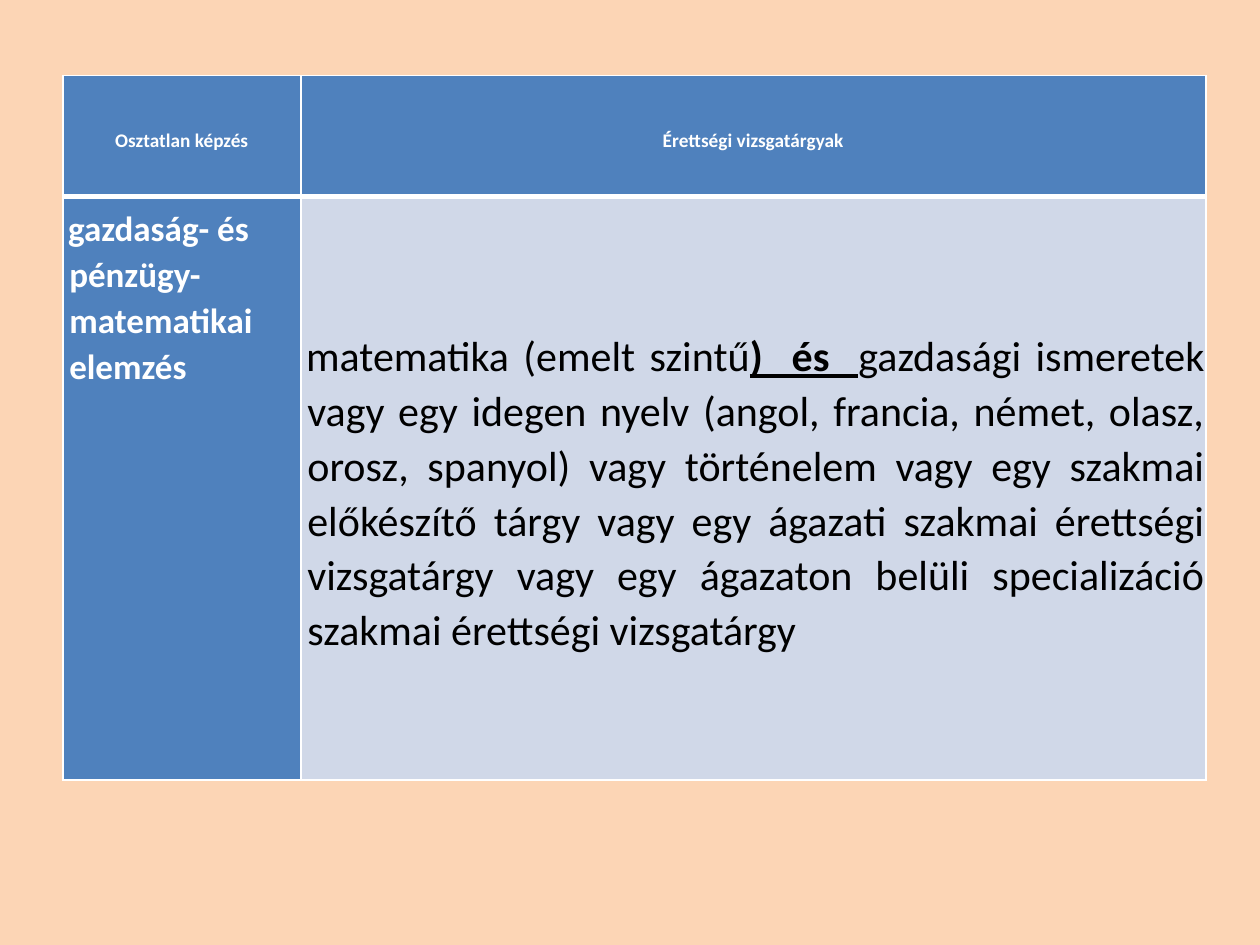
from dataclasses import dataclass

from lxml.etree import SubElement
from pptx import Presentation
from pptx.dml.color import RGBColor as Color
from pptx.enum.text import MSO_ANCHOR as Anchor, PP_ALIGN as Align
from pptx.oxml.ns import qn
from pptx.util import Inches, Pt


@dataclass(frozen=True)
class Theme:
    font: str = "Calibri"
    background: str = "FCD5B5"
    accent: str = "4F81BD"
    band: str = "D0D8E8"
    light: str = "FFFFFF"
    dark: str = "000000"
    header_size: int = 11
    label_size: int = 20
    body_size: int = 24
    line: float = 1
    header_line: float = 3


@dataclass(frozen=True)
class Span:
    text: str
    bold: bool = False
    underline: bool = False


@dataclass(frozen=True)
class CellContent:
    spans: tuple[Span, ...]
    fill: str
    color: str
    size: int
    align: Align = Align.CENTER
    anchor: Anchor = Anchor.MIDDLE
    bottom_line: float = 1


THEME = Theme()
COLUMN_WIDTHS = (1.89, 7.18)
ROW_HEIGHTS = (0.96, 4.63)
CELL_FORMAT = {
    "margin_left": Inches(0.04),
    "margin_top": Inches(0.07),
    "margin_right": Inches(0.01),
    "margin_bottom": 0,
}
INDENT = {"marL": str(Inches(0.01)), "indent": str(Inches(-0.01))}


def header(text: str) -> CellContent:
    return CellContent((Span(text, bold=True),), THEME.accent, THEME.light,
                       THEME.header_size, bottom_line=THEME.header_line)


ROWS = (
    (header("Osztatlan képzés "), header("Érettségi vizsgatárgyak ")),
    (
        CellContent((Span("gazdaság- és pénzügy-matematikai elemzés", bold=True),),
                    THEME.accent, THEME.light, THEME.label_size, Align.LEFT, Anchor.TOP),
        CellContent((
            Span("matematika (emelt szintű"),
            Span(")  és  ", bold=True, underline=True),
            Span("gazdasági ismeretek vagy egy idegen nyelv (angol, francia, német, "
                 "olasz, orosz, spanyol) vagy történelem vagy egy szakmai előkészítő "
                 "tárgy vagy egy ágazati szakmai érettségi vizsgatárgy vagy egy "
                 "ágazaton belüli specializáció szakmai érettségi vizsgatárgy  "),
        ), THEME.band, THEME.dark, THEME.body_size, Align.JUSTIFY),
    ),
)


def apply_format(target, values: dict) -> None:
    for name, value in values.items():
        setattr(target, name, value)


def draw_borders(cell, widths: dict[str, float]) -> None:
    properties = cell._tc.get_or_add_tcPr()
    for position, (side, width) in enumerate(widths.items()):
        line = SubElement(properties, qn(f"a:ln{side}"), w=str(Pt(width)))
        fill = SubElement(line, qn("a:solidFill"))
        SubElement(fill, qn("a:srgbClr"), val=THEME.light)
        properties.insert(position, line)


def draw_cell(cell, content: CellContent, top_line: float) -> None:
    apply_format(cell, CELL_FORMAT | {"vertical_anchor": content.anchor})
    cell.fill.solid()
    cell.fill.fore_color.rgb = Color.from_string(content.fill)
    draw_borders(cell, {"L": THEME.line, "R": THEME.line,
                        "T": top_line, "B": content.bottom_line})
    para = cell.text_frame.paragraphs[0]
    apply_format(para, {"alignment": content.align, "line_spacing": 1.07})
    for name, value in INDENT.items():
        para._p.get_or_add_pPr().set(name, value)
    for span in content.spans:
        run = para.add_run()
        run.text = span.text
        apply_format(run.font, {"name": THEME.font, "size": Pt(content.size),
                                "bold": span.bold, "underline": span.underline})
        run.font.color.rgb = Color.from_string(content.color)


def draw_table(page) -> None:
    table = page.shapes.add_table(
        len(ROW_HEIGHTS), len(COLUMN_WIDTHS), Inches(0.5), Inches(0.6),
        Inches(sum(COLUMN_WIDTHS)), Inches(sum(ROW_HEIGHTS))).table
    for column, width in zip(table.columns, COLUMN_WIDTHS):
        column.width = Inches(width)
    for row, height in zip(table.rows, ROW_HEIGHTS):
        row.height = Inches(height)
    for row_index, contents in enumerate(ROWS):
        top_line = THEME.header_line if row_index == 1 else THEME.line
        for column_index, content in enumerate(contents):
            draw_cell(table.cell(row_index, column_index), content, top_line)


def main() -> None:
    deck = Presentation()
    apply_format(deck, {"slide_width": Inches(10), "slide_height": Inches(7.5)})
    page = deck.slides.add_slide(deck.slide_layouts.get_by_name("Blank"))
    page.background.fill.solid()
    page.background.fill.fore_color.rgb = Color.from_string(THEME.background)
    draw_table(page)
    deck.save("out.pptx")


if __name__ == "__main__":
    main()
